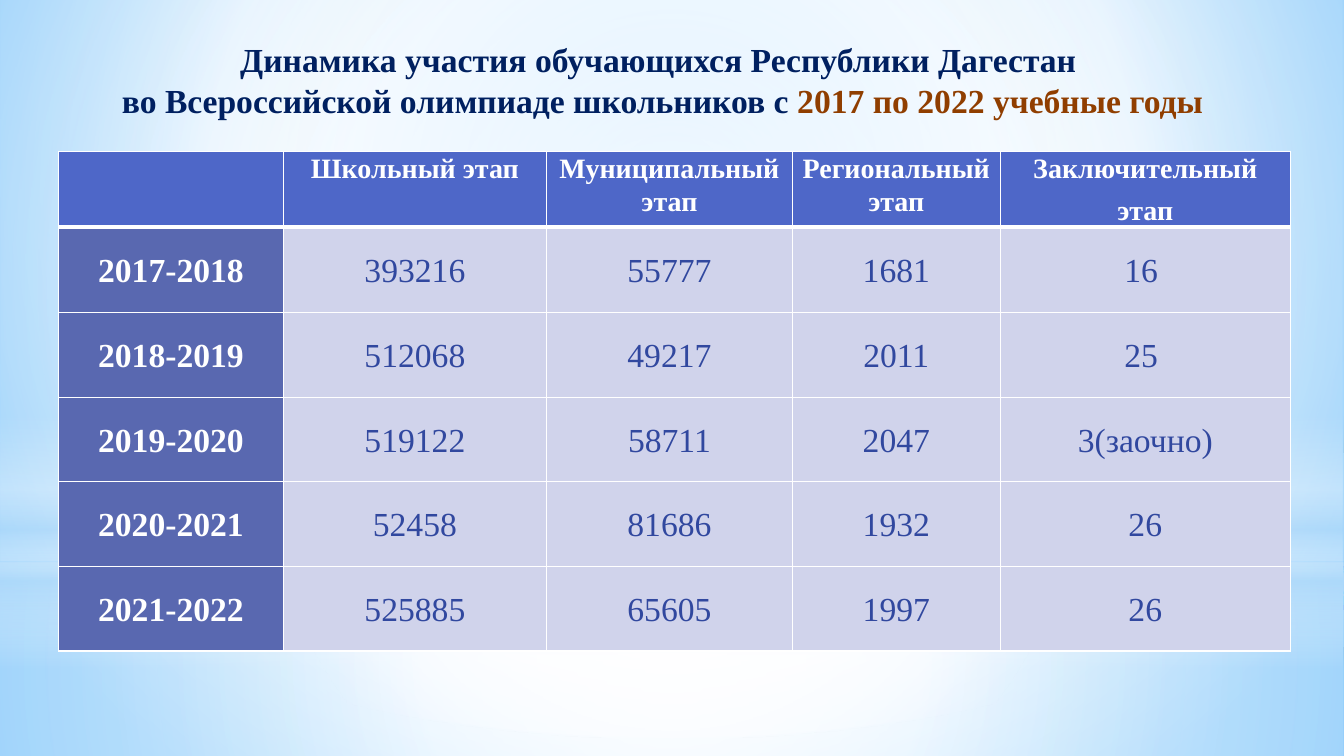
from dataclasses import dataclass

from lxml.etree import SubElement
from pptx import Presentation
from pptx.dml.color import RGBColor
from pptx.enum.shapes import MSO_SHAPE as Shape
from pptx.enum.text import MSO_ANCHOR as Anchor, MSO_AUTO_SIZE as AutoSize, PP_ALIGN as Align
from pptx.oxml.ns import qn
from pptx.util import Inches, Pt


@dataclass(frozen=True)
class Theme:
    font: str = "Times New Roman"
    navy: str = "002060"
    brown: str = "903E00"
    white: str = "FFFFFF"
    header: str = "4E67C8"
    years: str = "5968B0"
    body: str = "D0D3EB"
    figures: str = "31489F"
    sky: str = "B4DCFA"
    backdrop_edge: str = "9ED5FF"
    backdrop_far: str = "5BB9FF"
    large: int = 24
    small: int = 20
    thin: int = 1
    thick: int = 3


THEME = Theme()
CENTRE = (50, 50, 50, 50)

HEADINGS = ["", "Школьный этап", "Муниципальный этап", "Региональный этап",
            "Заключительный\nэтап"]
PARTICIPANTS = [
    ["2017-2018", "393216", "55777", "1681", "16 "],
    ["2018-2019", "512068", "49217", "2011", "25 "],
    ["2019-2020", "519122", "58711", "2047", "3(заочно)"],
    ["2020-2021", "52458", "81686", "1932", "26"],
    ["2021-2022", "525885", "65605", "1997", "26"],
]
COLUMN_WIDTHS = [2.23, 2.61, 2.44, 2.06, 2.88]
ROW_HEIGHTS = [0.75, 0.85, 0.84, 0.84, 0.84, 0.84]


def add_text(paragraph, text, *, size, color, bold=False):
    run = paragraph.add_run()
    run.text = text
    run.font.name = THEME.font
    run.font.size = Pt(size)
    run.font.bold = bold
    run.font.color.rgb = RGBColor.from_string(color)


def set_gradient(fill, owner, stops, focus=None):
    """Fill with (position, colour, opacity) stops: radial to focus, or downward."""
    fill.gradient()
    gradient = next(owner.iter(qn("a:gradFill")))
    gradient.clear()
    stop_list = SubElement(gradient, qn("a:gsLst"))
    for position, color, opacity in stops:
        stop = SubElement(stop_list, qn("a:gs"), pos=str(position * 1000))
        tint = SubElement(stop, qn("a:srgbClr"), val=color)
        if opacity < 100:
            SubElement(tint, qn("a:alpha"), val=str(opacity * 1000))
    if focus:
        radial = SubElement(gradient, qn("a:path"), path="circle")
        sides = {side: str(share * 1000) for side, share in zip("ltrb", focus)}
        SubElement(radial, qn("a:fillToRect"), **sides)
    else:
        SubElement(gradient, qn("a:lin"), ang="5400000", scaled="0")


def add_glow(slide, preset, top, height, stops, focus=None):
    glow = slide.shapes.add_shape(preset, 0, Inches(top), Inches(13.33), Inches(height))
    glow.shadow.inherit = False
    glow.line.fill.background()
    set_gradient(glow.fill, glow.element, stops, focus)


def add_backdrop(slide):
    white, sky = THEME.white, THEME.sky
    set_gradient(slide.background.fill, slide.element,
                 [(0, THEME.backdrop_edge, 100), (60, white, 100),
                  (100, THEME.backdrop_far, 100)], (20, 10, 20, 60))
    add_glow(slide, Shape.RECTANGLE, 5.58, 1.92,
             [(0, white, 91), (37, white, 76), (100, sky, 79)], CENTRE)
    add_glow(slide, Shape.RECTANGLE, 0, 5.58,
             [(0, white, 89), (48, white, 62), (100, sky, 79)], CENTRE)
    add_glow(slide, Shape.RECTANGLE, 4.12, 2.5,
             [(0, white, 0), (29, white, 30), (45, sky, 40),
              (55, white, 26), (65, sky, 60), (100, white, 0)])
    add_glow(slide, Shape.OVAL, 1.75, 5.58, [(0, white, 100), (56, white, 0)], CENTRE)


def place_title(slide, left, top, width, height):
    title = slide.shapes.title
    slide.shapes.element.append(title.element)  # in front of the backdrop
    title.left, title.top = Inches(left), Inches(top)
    title.width, title.height = Inches(width), Inches(height)
    frame = title.text_frame
    frame.word_wrap = True
    frame.auto_size = AutoSize.NONE
    frame.vertical_anchor = Anchor.MIDDLE
    frame.margin_top, frame.margin_bottom = Inches(0.05), Inches(0.13)
    heading = frame.paragraphs[0]
    heading.alignment = Align.CENTER
    style = dict(size=THEME.large, bold=True)
    add_text(heading, "Динамика участия обучающихся Республики Дагестан ",
             color=THEME.navy, **style)
    heading.add_line_break()
    add_text(heading, "во Всероссийской олимпиаде школьников с ", color=THEME.navy, **style)
    add_text(heading, "2017 по 2022 учебные годы", color=THEME.brown, **style)


def set_borders(cell, **widths):
    properties = cell._tc.get_or_add_tcPr()
    for index, side in enumerate("LRTB"):
        line = properties.makeelement(
            qn(f"a:ln{side}"), {"w": str(Pt(widths.get(side, THEME.thin)))})
        color = SubElement(line, qn("a:solidFill"))
        SubElement(color, qn("a:srgbClr"), val=THEME.white)
        properties.insert(index, line)


def fill_cell(cell, text, fill, anchor, **style):
    cell.fill.solid()
    cell.fill.fore_color.rgb = RGBColor.from_string(fill)
    cell.vertical_anchor = anchor
    cell.margin_left = cell.margin_right = Inches(0.07)
    cell.margin_top = cell.margin_bottom = 0
    if not text:
        return
    frame = cell.text_frame
    for index, line in enumerate(text.split("\n")):
        paragraph = frame.add_paragraph() if index else frame.paragraphs[0]
        paragraph.alignment = Align.CENTER
        paragraph.line_spacing = 1.07
        if index:
            paragraph.space_before = Pt(6)
        add_text(paragraph, line, **style)


def add_participants_table(slide, left, top, width, height):
    rows = [HEADINGS] + PARTICIPANTS
    table = slide.shapes.add_table(len(rows), len(HEADINGS), Inches(left), Inches(top),
                                   Inches(width), Inches(height)).table
    table.horz_banding = False
    for column, column_width in zip(table.columns, COLUMN_WIDTHS):
        column.width = Inches(column_width)
    for row, row_height in zip(table.rows, ROW_HEIGHTS):
        row.height = Inches(row_height)
    for r, values in enumerate(rows):
        for c, value in enumerate(values):
            cell = table.cell(r, c)
            if r == 0:
                fill_cell(cell, value, THEME.header, Anchor.TOP,
                          size=THEME.small, color=THEME.white, bold=True)
                set_borders(cell, B=THEME.thick)
                continue
            is_year = c == 0
            fill_cell(cell, value, THEME.years if is_year else THEME.body, Anchor.MIDDLE,
                      size=THEME.large, bold=is_year,
                      color=THEME.white if is_year else THEME.figures)
            set_borders(cell, T=THEME.thick if r == 1 else THEME.thin)


def main():
    deck = Presentation()
    deck.slide_width, deck.slide_height = Inches(13.33), Inches(7.5)
    slide = deck.slides.add_slide(deck.slide_layouts[5])
    add_backdrop(slide)
    place_title(slide, 0.82, 0.32, 11.5, 1.02)
    add_participants_table(slide, 0.58, 1.5, 12.22, 4.97)
    deck.save("out.pptx")


if __name__ == "__main__":
    main()
